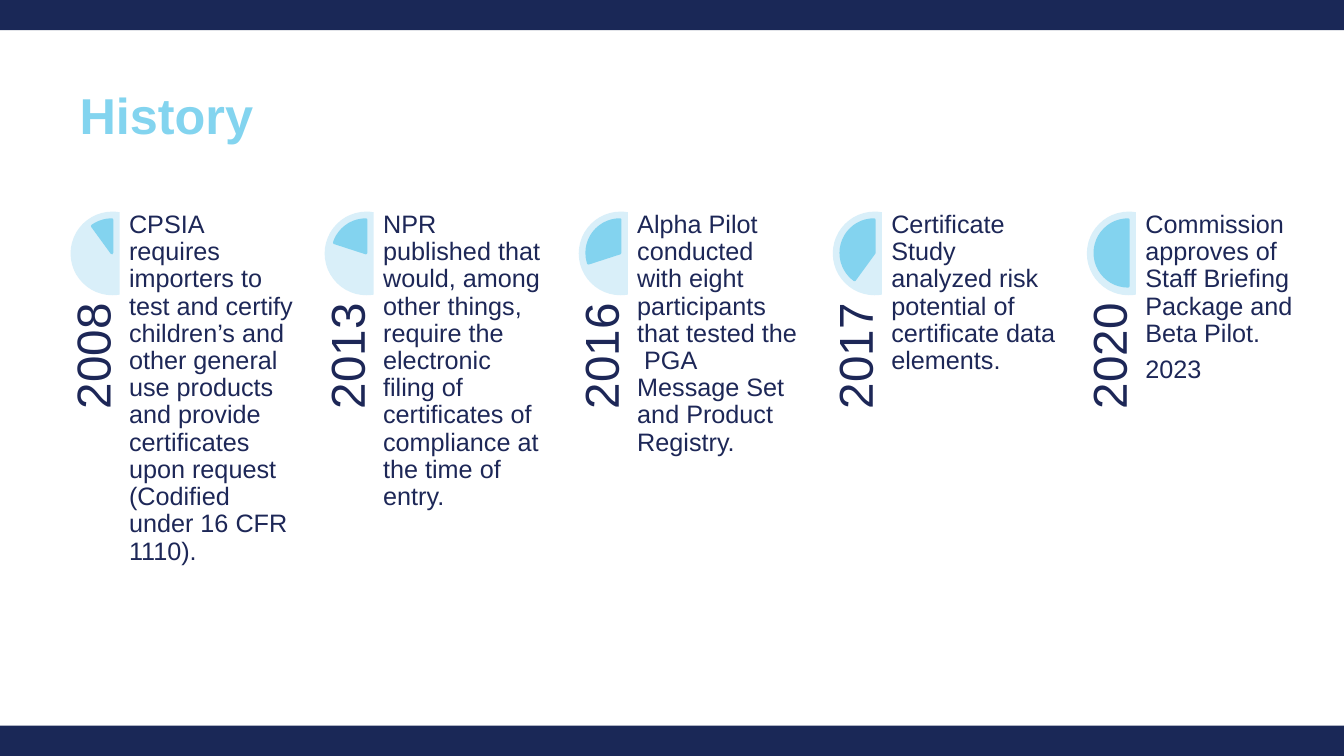
from dataclasses import dataclass

from pptx import Presentation
from pptx.dml.color import RGBColor
from pptx.enum.shapes import MSO_SHAPE as Shape
from pptx.enum.text import MSO_ANCHOR as Anchor, PP_ALIGN as Align
from pptx.util import Inches, Pt


@dataclass(frozen=True)
class Theme:
    font: str = "Arial"
    bar: RGBColor = RGBColor(0x1A, 0x28, 0x57)
    heading: RGBColor = RGBColor(0x83, 0xD4, 0xEF)
    dial: RGBColor = RGBColor(0xD9, 0xEF, 0xF9)
    wedge: RGBColor = RGBColor(0x83, 0xD3, 0xEF)
    ink: RGBColor = RGBColor(0x1D, 0x27, 0x57)
    heading_size: Pt = Pt(36)
    year_size: Pt = Pt(34)
    body_size: Pt = Pt(18)


THEME = Theme()
SLIDE_WIDTH, SLIDE_HEIGHT, BAR_HEIGHT = 13.33, 7.5, 0.3
FIRST_LEFT, TOP, STEP = 0.7, 2.1, 2.52
DIAL_SIZE, WEDGE_SIZE, WEDGE_INSET = 0.83, 0.66, 0.08
WEDGE_DEGREES = 36
ADJUSTMENT_PER_DEGREE = 0.6

MILESTONES = [
    ("2008", ["CPSIA requires importers to test and certify children’s and other "
              "general use products and provide certificates upon request "
              "(Codified under 16 CFR 1110)."]),
    ("2013", ["NPR published that would, among other things, require the electronic "
              "filing of certificates of compliance at the time of entry."]),
    ("2016", ["Alpha Pilot conducted with eight participants that tested the  PGA "
              "Message Set and Product Registry."]),
    ("2017", ["Certificate Study analyzed risk potential of certificate data elements."]),
    ("2020", ["Commission approves of Staff Briefing Package and Beta Pilot.", "2023"]),
]


def add_filled(slide, kind, left, top, width, height, color):
    shape = slide.shapes.add_shape(
        kind, Inches(left), Inches(top), Inches(width), Inches(height))
    shape.shadow.inherit = False
    shape.fill.solid()
    shape.fill.fore_color.rgb = color
    shape.line.fill.background()
    return shape


def add_sector(slide, kind, left, top, size, color, start, end):
    sector = add_filled(slide, kind, left, top, size, size, color)
    sector.adjustments[0] = start * ADJUSTMENT_PER_DEGREE
    sector.adjustments[1] = end * ADJUSTMENT_PER_DEGREE
    return sector


def add_text(slide, left, top, width, height, paragraphs, size, color,
             inset=(0, 0), anchor=Anchor.TOP, align=Align.LEFT, bold=False,
             before=0, after=0):
    box = slide.shapes.add_textbox(
        Inches(left), Inches(top), Inches(width), Inches(height))
    frame = box.text_frame
    frame.word_wrap = True
    frame.vertical_anchor = anchor
    frame.margin_left = frame.margin_right = Inches(inset[0])
    frame.margin_top = frame.margin_bottom = Inches(inset[1])
    frame.text = "\n".join(paragraphs)
    for paragraph in frame.paragraphs:
        paragraph.alignment = align
        paragraph.line_spacing = 0.9
        paragraph.space_before = Pt(before)
        paragraph.space_after = Pt(after)
        paragraph.font.name = THEME.font
        paragraph.font.size = size
        paragraph.font.bold = bold
        paragraph.font.color.rgb = color
    return box


def add_milestone(slide, index, year, description):
    left = FIRST_LEFT + index * STEP
    add_sector(slide, Shape.CHORD, left, TOP, DIAL_SIZE, THEME.dial, 80, 280)
    wedge = add_sector(slide, Shape.PIE, left + WEDGE_INSET, TOP + WEDGE_INSET,
                       WEDGE_SIZE, THEME.wedge,
                       270 - WEDGE_DEGREES * (index + 1), 270)
    wedge.line.color.rgb = THEME.wedge
    wedge.line.width = Pt(2)
    year_label = add_text(slide, left - 0.95, 3.96, 2.4, 0.5, [year],
                          THEME.year_size, THEME.ink,
                          anchor=Anchor.BOTTOM, align=Align.RIGHT)
    year_label.rotation = 270
    add_text(slide, left + 0.58, TOP, 1.65, 3.3, description,
             THEME.body_size, THEME.ink, after=6.3)


def main():
    deck = Presentation()
    deck.slide_width = Inches(SLIDE_WIDTH)
    deck.slide_height = Inches(SLIDE_HEIGHT)
    slide = deck.slides.add_slide(deck.slide_layouts[6])
    for bar_top in (SLIDE_HEIGHT - BAR_HEIGHT, 0):
        add_filled(slide, Shape.RECTANGLE, 0, bar_top, SLIDE_WIDTH, BAR_HEIGHT,
                   THEME.bar)
    add_text(slide, 0.69, 0.85, 11.99, 1.22, ["History"], THEME.heading_size,
             THEME.heading, inset=(0.1, 0.05), bold=True, before=10)
    for index, (year, description) in enumerate(MILESTONES):
        add_milestone(slide, index, year, description)
    deck.save("out.pptx")


if __name__ == "__main__":
    main()
